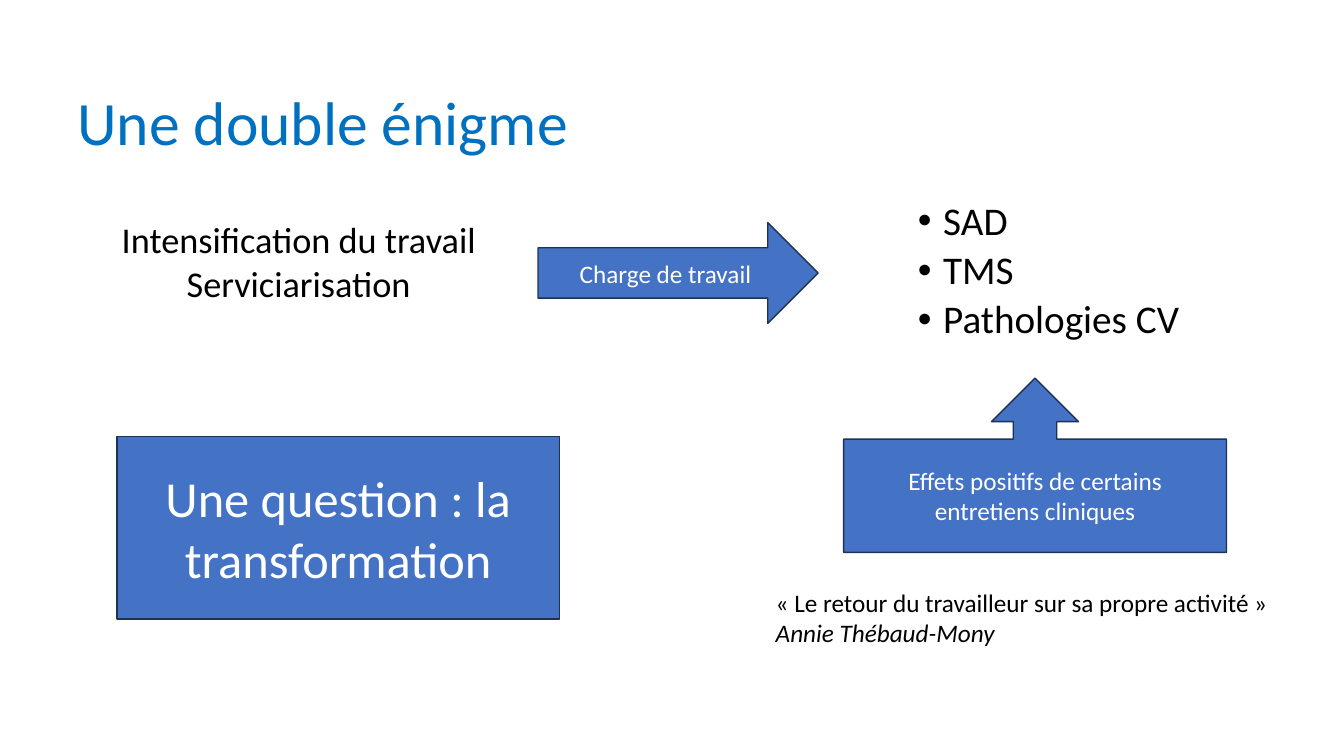
from dataclasses import dataclass

from lxml.etree import SubElement
from pptx import Presentation
from pptx.dml.color import RGBColor
from pptx.enum.shapes import MSO_SHAPE
from pptx.enum.text import MSO_ANCHOR, PP_ALIGN
from pptx.oxml.ns import qn
from pptx.util import Cm, Pt


@dataclass(frozen=True)
class Theme:
    font: str = "Calibri"
    title_color: RGBColor = RGBColor(0x00, 0x70, 0xC0)
    text_color: RGBColor = RGBColor(0x00, 0x00, 0x00)
    fill_color: RGBColor = RGBColor(0x44, 0x72, 0xC4)
    line_color: RGBColor = RGBColor(0x1E, 0x32, 0x56)
    label_color: RGBColor = RGBColor(0xFF, 0xFF, 0xFF)
    title_size: float = 44
    question_size: float = 36
    list_size: float = 28
    cause_size: float = 25.9
    label_size: float = 18


theme = Theme()


def write_lines(shape, lines, size, color, align, anchor=MSO_ANCHOR.TOP, line_spacing=1.0, space_before=0):
    frame = shape.text_frame
    frame.word_wrap = True
    frame.vertical_anchor = anchor
    frame.text = "\n".join(lines)
    for paragraph in frame.paragraphs:
        paragraph.alignment = align
        paragraph.line_spacing = line_spacing
        paragraph.space_before = Pt(space_before)
        paragraph.font.name = theme.font
        paragraph.font.size = Pt(size)
        paragraph.font.color.rgb = color
    return frame.paragraphs


presentation = Presentation()
presentation.slide_width = Cm(33.87)
presentation.slide_height = Cm(19.05)
slide = presentation.slides.add_slide(presentation.slide_layouts[6])

title = slide.shapes.add_textbox(Cm(0.84), Cm(1.32), Cm(14.6), Cm(3.68))
write_lines(title, ["Une double énigme"], theme.title_size, theme.title_color,
            PP_ALIGN.CENTER, MSO_ANCHOR.MIDDLE, line_spacing=0.9)

causes = slide.shapes.add_textbox(Cm(2.69), Cm(5.64), Cm(9.68), Cm(2.34))
write_lines(causes, ["Intensification du travail", "Serviciarisation"], theme.cause_size,
            theme.text_color, PP_ALIGN.CENTER, line_spacing=0.7, space_before=10)

disorders = slide.shapes.add_textbox(Cm(21.62), Cm(4.95), Cm(8.92), Cm(4.39))
for paragraph in write_lines(disorders, ["SAD", "TMS", "Pathologies CV"], theme.list_size,
                             theme.text_color, PP_ALIGN.LEFT, line_spacing=0.9, space_before=5):
    paragraph.level = 1
    properties = paragraph._p.get_or_add_pPr()
    properties.set("marL", str(Cm(1.9)))
    properties.set("indent", str(Cm(-0.64)))
    bullet_font = SubElement(properties, qn("a:buFont"), typeface="Arial")
    bullet = SubElement(properties, qn("a:buChar"), char="•")
    default_run = properties.find(qn("a:defRPr"))
    default_run.addprevious(bullet_font)
    default_run.addprevious(bullet)

blocks = [
    (MSO_SHAPE.RIGHT_ARROW, 13.56, 5.61, 7.06, 2.54, "Charge de travail", theme.label_size),
    (MSO_SHAPE.UP_ARROW_CALLOUT, 21.26, 9.53, 9.65, 4.39,
     "Effets positifs de certains entretiens cliniques", theme.label_size),
    (MSO_SHAPE.RECTANGLE, 2.95, 11, 11.15, 4.6, "Une question : la transformation", theme.question_size),
]
for preset, left, top, width, height, label, size in blocks:
    block = slide.shapes.add_shape(preset, Cm(left), Cm(top), Cm(width), Cm(height))
    block.shadow.inherit = False
    block.fill.solid()
    block.fill.fore_color.rgb = theme.fill_color
    block.line.color.rgb = theme.line_color
    block.line.width = Pt(1)
    write_lines(block, [label], size, theme.label_color, PP_ALIGN.CENTER, MSO_ANCHOR.MIDDLE)

quote = slide.shapes.add_textbox(Cm(19.3), Cm(14.68), Cm(13.56), Cm(1.8))
quote_lines = write_lines(quote, ["« Le retour du travailleur sur sa propre activité »", "Annie Thébaud-Mony"],
                          theme.label_size, theme.text_color, PP_ALIGN.LEFT)
quote_lines[1].font.italic = True

presentation.save("out.pptx")
